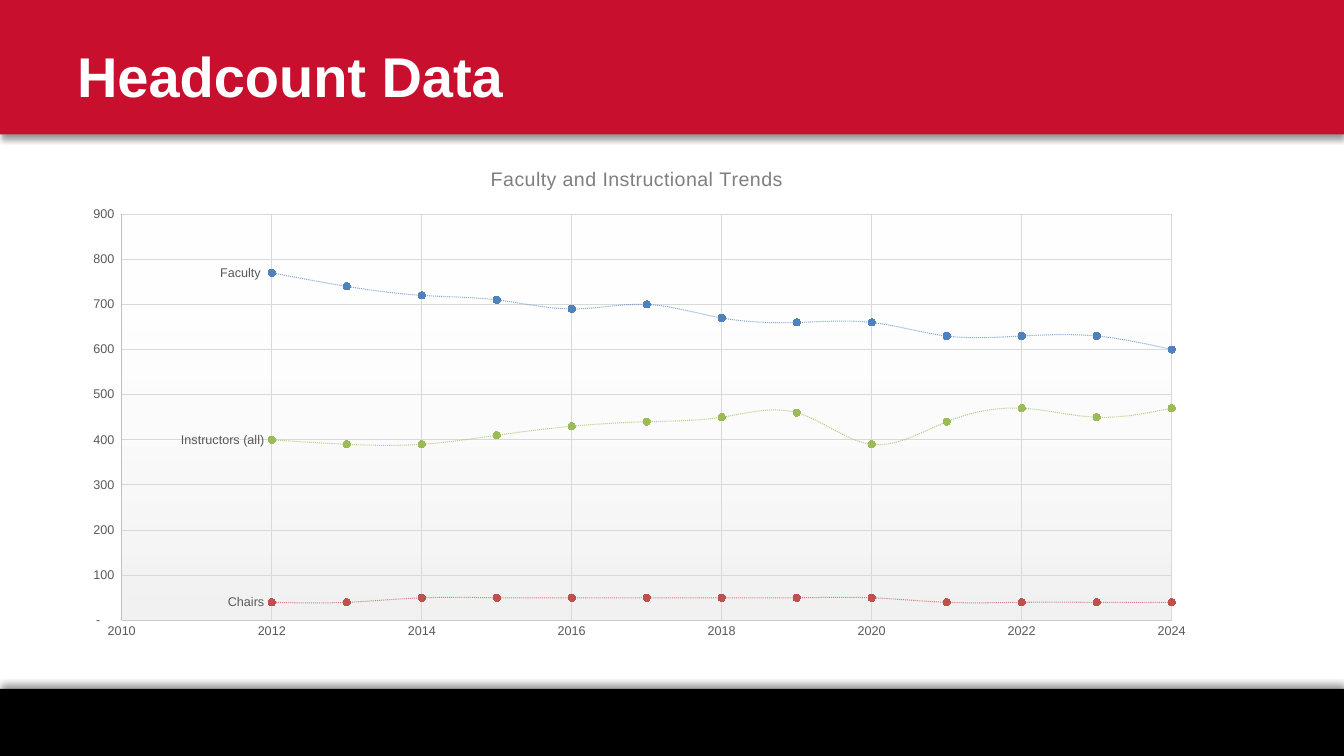
"""Build the headcount slide with its faculty and instructor trend chart."""
from lxml.etree import SubElement
from pptx import Presentation
from pptx.chart.data import XyChartData
from pptx.dml.color import RGBColor
from pptx.enum.chart import XL_CHART_TYPE, XL_LABEL_POSITION, XL_MARKER_STYLE, XL_TICK_MARK
from pptx.enum.dml import MSO_LINE
from pptx.enum.shapes import MSO_SHAPE
from pptx.enum.text import MSO_ANCHOR
from pptx.oxml import parse_xml
from pptx.oxml.ns import nsdecls, qn
from pptx.util import Emu, Pt

PX = 9525
CHART_WIDTH, CHART_HEIGHT = 1087, 478
FONT = "Arial"
BLACK = RGBColor(0x00, 0x00, 0x00)
WHITE = RGBColor(0xFF, 0xFF, 0xFF)
RED = RGBColor(0xC8, 0x10, 0x2E)
PLOT_GRAY = RGBColor(0xF2, 0xF2, 0xF2)
GRID = RGBColor(0xD9, 0xD9, 0xD9)
YEAR_LINE = RGBColor(0xCC, 0xCC, 0xCC)
COUNT_LINE = RGBColor(0xBF, 0xBF, 0xBF)
AXIS_TEXT = RGBColor(0x59, 0x59, 0x59)
TITLE_TEXT = RGBColor(0x7F, 0x7F, 0x7F)

COUNT_FORMAT = '_(* #,##0_);_(* \\(#,##0\\);_(* "-"??_);_(@_)'
FIRST_YEAR = 2012
HEADCOUNTS = [
    ("Faculty ", RGBColor(0x4F, 0x81, 0xBD),
     [770, 740, 720, 710, 690, 700, 670, 660, 660, 630, 630, 630, 600]),
    ("Chairs", RGBColor(0xC0, 0x50, 0x4D),
     [40, 40, 50, 50, 50, 50, 50, 50, 50, 40, 40, 40, 40]),
    ("Instructors (all)", RGBColor(0x9B, 0xBB, 0x59),
     [400, 390, 390, 410, 430, 440, 450, 460, 390, 440, 470, 450, 470]),
]


def box(*lengths):
    """Turn pixel lengths into EMU."""
    return [Emu(length * PX) for length in lengths]


def style_font(font, size, color, bold=False):
    """Set the typeface, size, colour and weight of a font."""
    font.name, font.size, font.bold = FONT, Pt(size), bold
    font.color.rgb = color


def add_band(slide, top, height, color, shadow_angle):
    """Add a full-width band that casts a soft shadow."""
    band = slide.shapes.add_shape(MSO_SHAPE.RECTANGLE, *box(0, top, 1280, height))
    band.fill.solid()
    band.fill.fore_color.rgb = color
    band.line.fill.background()
    band.shadow.inherit = False
    effects = band._element.spPr.find(qn("a:effectLst"))
    effects.append(parse_xml(
        f'<a:outerShdw {nsdecls("a")} blurRad="50800" dist="38100" '
        f'dir="{shadow_angle * 60000}" rotWithShape="0">'
        f'<a:srgbClr val="{BLACK}"><a:alpha val="40000"/></a:srgbClr></a:outerShdw>'))


def add_heading(slide, text):
    """Add the slide heading over the top band."""
    frame = slide.shapes.add_textbox(*box(64, 16, 1056, 112)).text_frame
    frame.word_wrap = True
    frame.vertical_anchor = MSO_ANCHOR.MIDDLE
    heading = frame.paragraphs[0]
    heading.text = text
    style_font(heading.font, 40, WHITE, bold=True)


def place(part, index, left, top, width=None, height=None):
    """Give a chart part a manual layout, in pixels from the chart's corner."""
    for old in part.findall(qn("c:layout")):
        part.remove(old)
    layout = parse_xml(f'<c:layout {nsdecls("c")}><c:manualLayout/></c:layout>')
    settings = {"xMode": "edge", "yMode": "edge",
                "x": left / CHART_WIDTH, "y": top / CHART_HEIGHT}
    if width:
        settings = {"layoutTarget": "inner", **settings,
                    "w": width / CHART_WIDTH, "h": height / CHART_HEIGHT}
    for tag, value in settings.items():
        SubElement(layout[0], qn(f"c:{tag}")).set("val", str(value))
    part.insert(index, layout)


def style_axis(axis, low, high, step, number_format, line_color):
    """Set the scale, grid, line and labels of an axis."""
    axis.minimum_scale, axis.maximum_scale, axis.major_unit = low, high, step
    axis.major_tick_mark = axis.minor_tick_mark = XL_TICK_MARK.NONE
    axis.has_major_gridlines = True
    for line, color in ((axis.format.line, line_color),
                        (axis.major_gridlines.format.line, GRID)):
        line.width = Pt(0.75)
        line.color.rgb = color
    axis.tick_labels.number_format = number_format
    axis.tick_labels.number_format_is_linked = False
    style_font(axis.tick_labels.font, 9, AXIS_TEXT)


def style_series(series, color):
    """Draw a dotted smooth line with round markers, named at its first point."""
    series._element.get_or_add_smooth().val = True
    line = series.format.line
    line.width = Pt(0.75)
    line.color.rgb = color
    line.dash_style = MSO_LINE.ROUND_DOT
    stroke = series._element.find(f'{qn("c:spPr")}/{qn("a:ln")}')
    SubElement(stroke.find(f'.//{qn("a:srgbClr")}'), qn("a:alpha")).set("val", "70000")

    marker = series.marker
    marker.style, marker.size = XL_MARKER_STYLE.CIRCLE, 5
    marker.format.fill.solid()
    marker.format.fill.fore_color.rgb = color
    marker.format.line.color.rgb = color

    name_label = series.points[0].data_label
    style_font(name_label.font, 9, AXIS_TEXT)
    name_label.position = XL_LABEL_POSITION.LEFT
    for flag in series._element.iter(qn("c:showVal")):
        flag.set("val", "0")
    for flag in series._element.xpath(".//c:dLbl/c:showSerName"):
        flag.set("val", "1")


def style_backgrounds(chart):
    """Fill the chart white and the plot with a gradient from clear to pale gray."""
    chart_space = chart._chartSpace
    chart_space.chart.addnext(parse_xml(
        f'<c:spPr {nsdecls("c", "a")}><a:solidFill><a:srgbClr val="{WHITE}"/>'
        '</a:solidFill><a:ln><a:noFill/></a:ln></c:spPr>'))
    chart_space.chart.plotArea.append(parse_xml(
        f'<c:spPr {nsdecls("c", "a")}><a:gradFill><a:gsLst>'
        f'<a:gs pos="0"><a:srgbClr val="{WHITE}"><a:alpha val="0"/></a:srgbClr></a:gs>'
        f'<a:gs pos="100000"><a:srgbClr val="{PLOT_GRAY}"/></a:gs>'
        '</a:gsLst><a:lin ang="5400000" scaled="0"/></a:gradFill></c:spPr>'))


def add_trend_chart(slide):
    """Add the scatter chart of headcounts by year."""
    trends = XyChartData()
    for name, _, counts in HEADCOUNTS:
        group = trends.add_series(name)
        for year, count in enumerate(counts, FIRST_YEAR):
            group.add_data_point(year, count)
    chart = slide.shapes.add_chart(
        XL_CHART_TYPE.XY_SCATTER_SMOOTH,
        *box(64, 140, CHART_WIDTH, CHART_HEIGHT), trends).chart
    style_font(chart.font, 10, BLACK)
    chart.has_legend = False

    chart.has_title = True
    title = chart.chart_title.text_frame.paragraphs[0]
    title.text = "Faculty and Instructional Trends"
    style_font(title.font, 14, TITLE_TEXT)
    title.font._element.set("spc", "20")
    place(chart.chart_title._element, 1, 400, 15)

    style_axis(chart.category_axis, 2010, 2024, 2, "General", YEAR_LINE)
    style_axis(chart.value_axis, 0, 900, 100, COUNT_FORMAT, COUNT_LINE)
    plot = chart.plots[0]
    plot.vary_by_categories = False
    for series, (_, color, _) in zip(plot.series, HEADCOUNTS):
        style_series(series, color)
    place(chart._chartSpace.chart.plotArea, 0, 52, 64, 1000, 387)
    style_backgrounds(chart)


def main():
    """Build and save the slide."""
    deck = Presentation()
    deck.slide_width, deck.slide_height = box(1280, 720)
    slide = deck.slides.add_slide(deck.slide_layouts[6])
    add_band(slide, 656, 64, BLACK, 270)
    add_band(slide, 0, 128, RED, 90)
    add_heading(slide, "Headcount Data")
    add_trend_chart(slide)
    deck.save("out.pptx")


if __name__ == "__main__":
    main()
